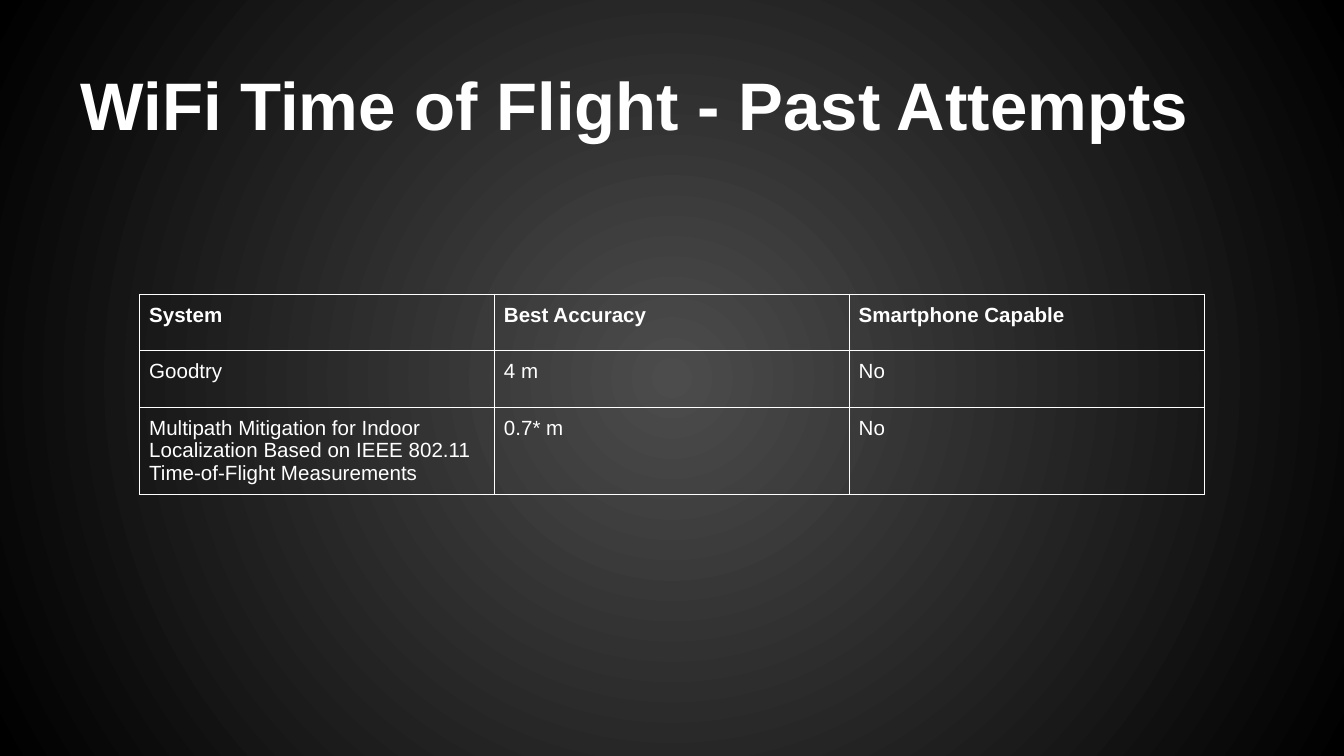
from pptx import Presentation
from pptx import util as u
from pptx.dml.color import RGBColor
from pptx.enum import text
from pptx.oxml import parse_xml
from pptx.oxml.ns import nsdecls

TITLE = "WiFi Time of Flight - Past Attempts"
ROWS = [
    ("System", "Best Accuracy", "Smartphone Capable"),
    ("Goodtry", "4 m", "No"),
    ("Multipath Mitigation for Indoor Localization Based on IEEE 802.11 "
     "Time-of-Flight Measurements", "0.7* m", "No"),
]
COLORS = {"ink": "FFFFFF", "glow": "4C4C4C", "edge": "000000"}
WIDE = 10
COL, ROW = 2.64, 0.42
SIDES = ("left", "right", "top", "bottom")


def put(item, values):
    for name, value in values.items():
        setattr(item, name, value)


def write(frame, words, size, bold):
    frame.text = words
    para = frame.paragraphs[0]
    para.alignment = text.PP_ALIGN.LEFT
    font = para.runs[0].font
    put(font, {"name": "Arial", "size": u.Pt(size), "bold": bold})
    font.color.rgb = RGBColor.from_string(COLORS["ink"])


def border(cell):
    props = cell._tc.get_or_add_tcPr()
    for i, side in enumerate("LRTB"):
        props.insert(i, parse_xml(
            f'<a:ln{side} {nsdecls("a")} w="{u.Pt(0.75)}"><a:solidFill>'
            f'<a:srgbClr val="{COLORS["ink"]}"/></a:solidFill></a:ln{side}>'))


def paint(slide):
    stops = "".join(
        f'<a:gs pos="{pos}"><a:srgbClr val="{COLORS[key]}"/></a:gs>'
        for pos, key in ((0, "glow"), (100000, "edge")))
    slide.element.cSld.insert(0, parse_xml(
        f'<p:bg {nsdecls("p", "a")}><p:bgPr><a:gradFill><a:gsLst>{stops}</a:gsLst>'
        '<a:path path="circle"><a:fillToRect l="50000" t="50000" r="50000" b="50000"/>'
        '</a:path></a:gradFill><a:effectLst/></p:bgPr></p:bg>'))


def main():
    deck = Presentation()
    put(deck, {"slide_width": u.Inches(WIDE), "slide_height": u.Inches(WIDE * 9 / 16)})
    slide = deck.slides.add_slide(deck.slide_layouts[5])
    paint(slide)

    title = slide.shapes.title
    put(title, {"left": u.Inches(0.5), "top": u.Inches(0.23),
                "width": u.Inches(9), "height": u.Inches(0.94)})
    frame = title.text_frame
    put(frame, {f"margin_{side}": u.Inches(0.1) for side in SIDES})
    put(frame, {"vertical_anchor": text.MSO_ANCHOR.BOTTOM, "word_wrap": True,
                "auto_size": text.MSO_AUTO_SIZE.NONE})
    write(frame, TITLE, 36, True)

    table = slide.shapes.add_table(
        len(ROWS), len(ROWS[0]), u.Inches(1.04), u.Inches(2.19),
        u.Inches(COL * len(ROWS[0])), u.Inches(ROW * len(ROWS))).table
    put(table, {"first_row": False, "horz_banding": False})
    for r, row in enumerate(ROWS):
        table.rows[r].height = u.Inches(ROW)
        for c, words in enumerate(row):
            cell = table.cell(r, c)
            put(cell, {f"margin_{side}": u.Inches(0.07) for side in SIDES})
            cell.fill.background()
            border(cell)
            write(cell.text_frame, words, 11, r == 0)
    deck.save("out.pptx")


if __name__ == "__main__":
    main()
